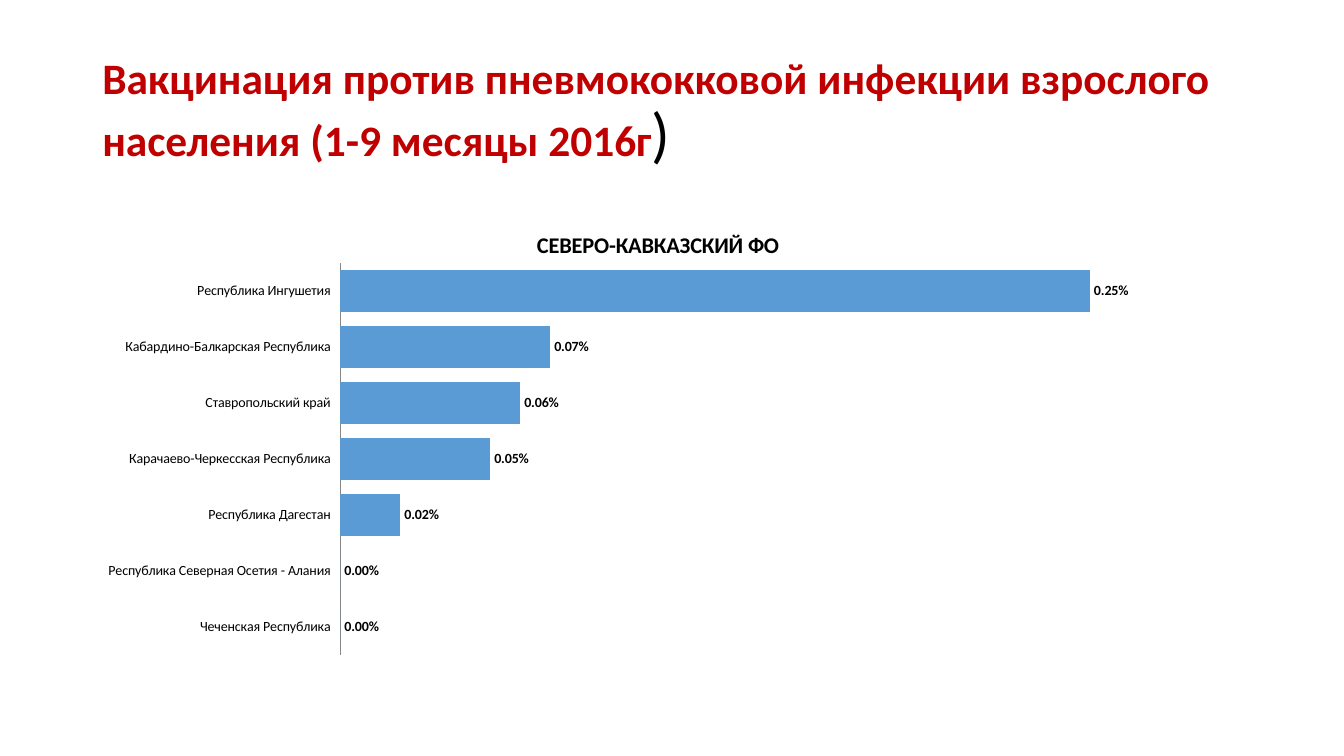
from lxml import etree
from pptx import Presentation
from pptx.chart.data import CategoryChartData
from pptx.dml.color import RGBColor
from pptx.enum.chart import XL_CHART_TYPE as Chart, XL_LABEL_POSITION as Place
from pptx.enum.chart import XL_TICK_LABEL_POSITION as Ticks, XL_TICK_MARK as Mark
from pptx.enum.text import MSO_ANCHOR as Anchor
from pptx.oxml.ns import qn
from pptx.util import Pt

COLORS = {"red": "C00000", "black": "000000", "bar": "5B9BD5", "axis": "868686"}
FONT = "Calibri"
HEADING = [
    ("Вакцинация против пневмококковой инфекции взрослого населения (1-9 месяцы 2016г",
     31, "red", True),
    (")", 44, "black", False),
]
REGION = "СЕВЕРО-КАВКАЗСКИЙ ФО"
RATES = {
    "Чеченская Республика": 0,
    "Республика Северная Осетия - Алания": 0,
    "Республика Дагестан": 0.0002,
    "Карачаево-Черкесская Республика": 0.0005,
    "Ставропольский край": 0.0006,
    "Кабардино-Балкарская Республика": 0.0007,
    "Республика Ингушетия": 0.0025,
}
LEFT, WIDTH = Pt(66), Pt(828)


def rgb(name):
    return RGBColor.from_string(COLORS[name])


def style(font, size, color="black", bold=False):
    font.name, font.size, font.bold = FONT, Pt(size), bold
    font.color.rgb = rgb(color)


def lay_out(parent, index, **parts):
    """Give a chart part a manual layout, as fractions of the chart."""
    old = parent.find(qn("c:layout"))
    if old is not None:
        parent.remove(old)
    layout = etree.Element(qn("c:layout"))
    manual = etree.SubElement(layout, qn("c:manualLayout"))
    for tag, value in parts.items():
        etree.SubElement(manual, qn("c:" + tag)).set("val", str(value))
    parent.insert(index, layout)


def add_heading(slide):
    frame = slide.shapes.add_textbox(LEFT, Pt(28.8), WIDTH, Pt(104.4)).text_frame
    frame.word_wrap = True
    frame.vertical_anchor = Anchor.MIDDLE
    para = frame.paragraphs[0]
    para.line_spacing = 0.9
    for text, size, color, bold in HEADING:
        run = para.add_run()
        run.text = text
        style(run.font, size, color, bold)


def add_rates(slide):
    data = CategoryChartData(number_format="0.00%")
    data.categories = list(RATES)
    data.add_series("Series 1", list(RATES.values()))
    chart = slide.shapes.add_chart(
        Chart.BAR_CLUSTERED, LEFT, Pt(144), WIDTH, Pt(342.7), data).chart
    style(chart.font, 10)
    chart.has_legend = False

    chart.has_title = True
    title = chart.chart_title
    para = title.text_frame.paragraphs[0]
    para.text = REGION
    style(para.font, 16, bold=True)
    title.include_in_layout = False
    lay_out(title._element, 1, xMode="edge", yMode="edge", x=0.38, y=0.05)

    names, scale = chart.category_axis, chart.value_axis
    names.major_tick_mark = names.minor_tick_mark = Mark.NONE
    names.tick_label_position = Ticks.LOW
    names.format.line.color.rgb = rgb("axis")
    names.format.line.width = Pt(0.75)
    scale.minimum_scale, scale.maximum_scale = 0, 0.003
    scale.has_major_gridlines = False
    scale.visible = False

    plot = chart.plots[0]
    plot.gap_width, plot.overlap = 32, -25
    plot.vary_by_categories = False
    fill = plot.series[0].format.fill
    fill.solid()
    fill.fore_color.rgb = rgb("bar")
    plot.has_data_labels = True
    labels = plot.data_labels
    labels.show_value = True
    labels.number_format, labels.number_format_is_linked = "0.00%", False
    labels.position = Place.OUTSIDE_END
    style(labels.font, 10, bold=True)
    lay_out(plot._element.getparent(), 0, layoutTarget="inner", xMode="edge",
            yMode="edge", x=0.214, y=0.128, w=0.776, h=0.817)


def main():
    deck = Presentation()
    deck.slide_width, deck.slide_height = Pt(960), Pt(540)
    slide = deck.slides.add_slide(deck.slide_layouts[6])
    add_heading(slide)
    add_rates(slide)
    deck.save("out.pptx")


if __name__ == "__main__":
    main()
